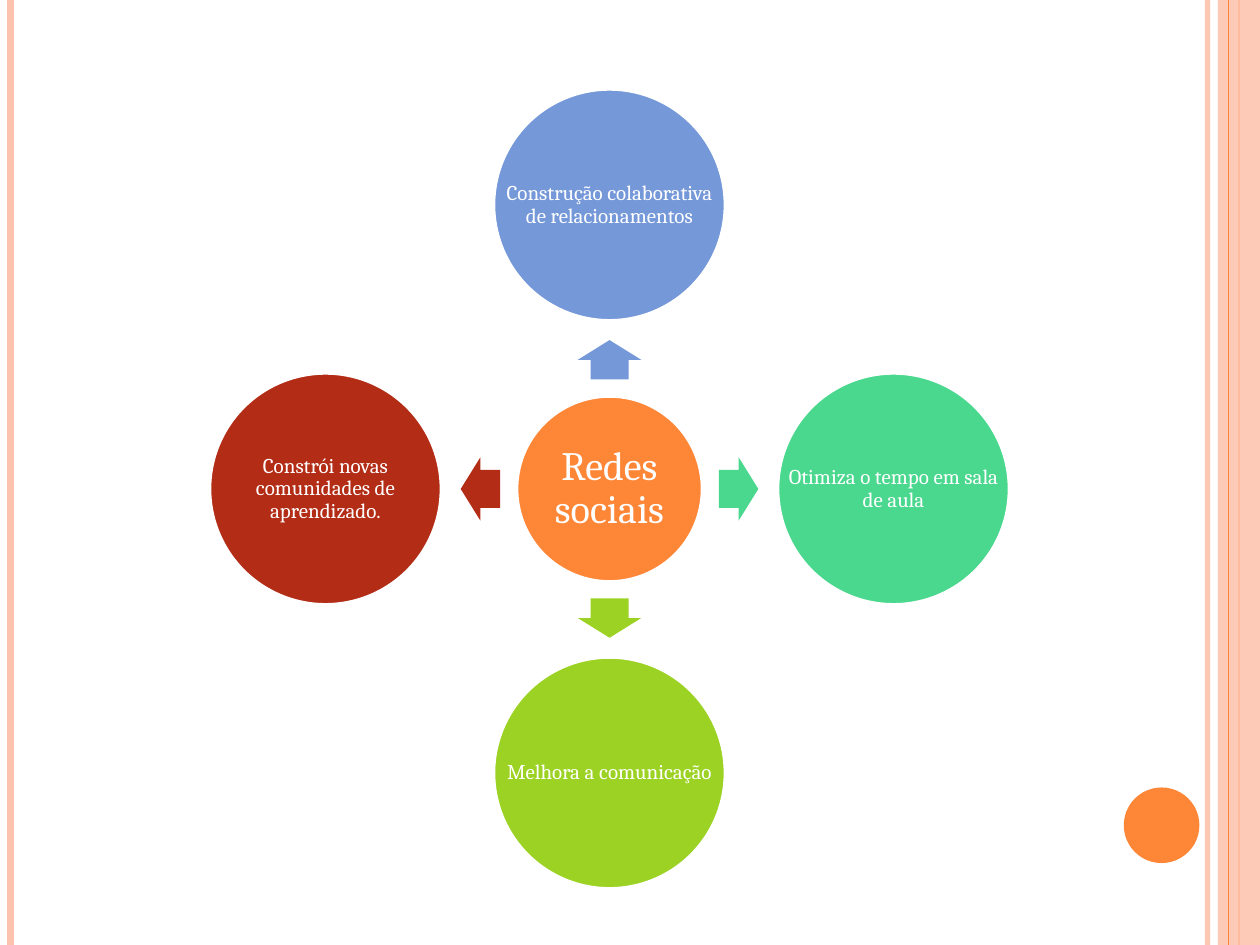
from math import cos, radians, sin

from lxml.etree import SubElement
from pptx import Presentation
from pptx.dml.color import RGBColor
from pptx.enum.shapes import MSO_CONNECTOR, MSO_SHAPE
from pptx.enum.text import MSO_ANCHOR, PP_ALIGN
from pptx.oxml.ns import qn
from pptx.util import Pt

WIDTH, HEIGHT = 720, 540
COLORS = {
    "white": "FFFFFF",
    "peach": "FEC3AE",
    "orange": "FE8637",
    "blue": "7598D9",
    "mint": "4AD78E",
    "lime": "9CD224",
    "red": "B32C16",
}

CENTER_X, CENTER_Y = 348.3, 279.4
HUB_SIZE, TOPIC_SIZE = 106.2, 132.5
TOPIC_DISTANCE, ARROW_DISTANCE = 162.3, 73.8
ARROW_LENGTH, ARROW_WIDTH = 22.5, 36.2

# x, colour, line width, opacity in percent
BACK_STRIPES = [
    (690, "peach", 3, 93),
    (6, "peach", 4.5, 100),
    (708, "orange", 1.5, 100),
]

# angle clockwise from the right, colour, text
TOPICS = [
    (270, "blue", "Construção colaborativa de relacionamentos"),
    (0, "mint", "Otimiza o tempo em sala de aula"),
    (90, "lime", "Melhora a comunicação"),
    (180, "red", "Constrói novas comunidades de aprendizado."),
]


class Painter:
    font_name = "Cambria"

    def __init__(self, slide):
        self.shapes = slide.shapes

    def paint(self, color_format, color, opacity=100):
        """Set a solid fill's colour and, below 100 percent, its opacity."""
        color_format.fore_color.rgb = RGBColor.from_string(COLORS[color])
        if opacity < 100:
            color_node = color_format._xPr.find(".//" + qn("a:srgbClr"))
            SubElement(color_node, qn("a:alpha"), val=str(opacity * 1000))

    def stripe(self, x, color, width, opacity=100):
        line = self.shapes.add_connector(
            MSO_CONNECTOR.STRAIGHT, Pt(x), Pt(0), Pt(x), Pt(HEIGHT))
        line.line.width = Pt(width)
        line.line.fill.solid()
        self.paint(line.line.fill, color, opacity)
        SubElement(line._element.spPr, qn("a:effectLst"))

    def shape(self, kind, x, y, width, height, color, opacity=100, outline=0):
        """Draw a filled shape centred on x, y."""
        shape = self.shapes.add_shape(
            kind, Pt(x - width / 2), Pt(y - height / 2), Pt(width), Pt(height))
        shape.shadow.inherit = False
        shape.fill.solid()
        self.paint(shape.fill, color, opacity)
        if outline:
            shape.line.width = Pt(outline)
            shape.line.fill.solid()
            self.paint(shape.line.fill, "white")
        else:
            shape.line.fill.background()
        return shape

    def arrow(self, x, y, angle, color):
        arrow = self.shape(
            MSO_SHAPE.RIGHT_ARROW, x, y, ARROW_LENGTH, ARROW_WIDTH, color)
        arrow.adjustments[0] = 0.6
        arrow.adjustments[1] = 0.5
        arrow.rotation = angle

    def labelled_circle(self, x, y, size, color, text, font_size, inset):
        """Lay the text over the circle so that it may use the full width."""
        self.shape(MSO_SHAPE.OVAL, x, y, size, size, color, outline=2)
        label = self.shapes.add_textbox(
            Pt(x - size / 2), Pt(y - size / 2), Pt(size), Pt(size))
        frame = label.text_frame
        frame.word_wrap = True
        frame.vertical_anchor = MSO_ANCHOR.MIDDLE
        frame.margin_left = frame.margin_right = Pt(inset)
        frame.margin_top = frame.margin_bottom = Pt(inset)
        paragraph = frame.paragraphs[0]
        paragraph.text = text
        paragraph.alignment = PP_ALIGN.CENTER
        paragraph.line_spacing = 0.9
        paragraph.font.name = self.font_name
        paragraph.font.size = Pt(font_size)
        paragraph.font.color.rgb = RGBColor.from_string(COLORS["white"])


def from_center(angle, distance):
    turn = radians(angle)
    return CENTER_X + distance * cos(turn), CENTER_Y + distance * sin(turn)


def main():
    deck = Presentation()
    deck.slide_width, deck.slide_height = Pt(WIDTH), Pt(HEIGHT)
    painter = Painter(deck.slides.add_slide(deck.slide_layouts[6]))

    for stripe in BACK_STRIPES:
        painter.stripe(*stripe)
    painter.shape(MSO_SHAPE.RECTANGLE, 708, HEIGHT / 2, 24, HEIGHT, "peach", 87)
    painter.stripe(702, "orange", 0.75)
    painter.shape(MSO_SHAPE.OVAL, 663.8, 471.6, 43.2, 43.2, "orange")

    painter.labelled_circle(
        CENTER_X, CENTER_Y, HUB_SIZE, "orange", "Redes sociais", 23, 2.3)
    for angle, color, text in TOPICS:
        painter.arrow(*from_center(angle, ARROW_DISTANCE), angle, color)
        painter.labelled_circle(
            *from_center(angle, TOPIC_DISTANCE), TOPIC_SIZE, color, text, 12, 1.2)

    deck.save("out.pptx")


if __name__ == "__main__":
    main()
